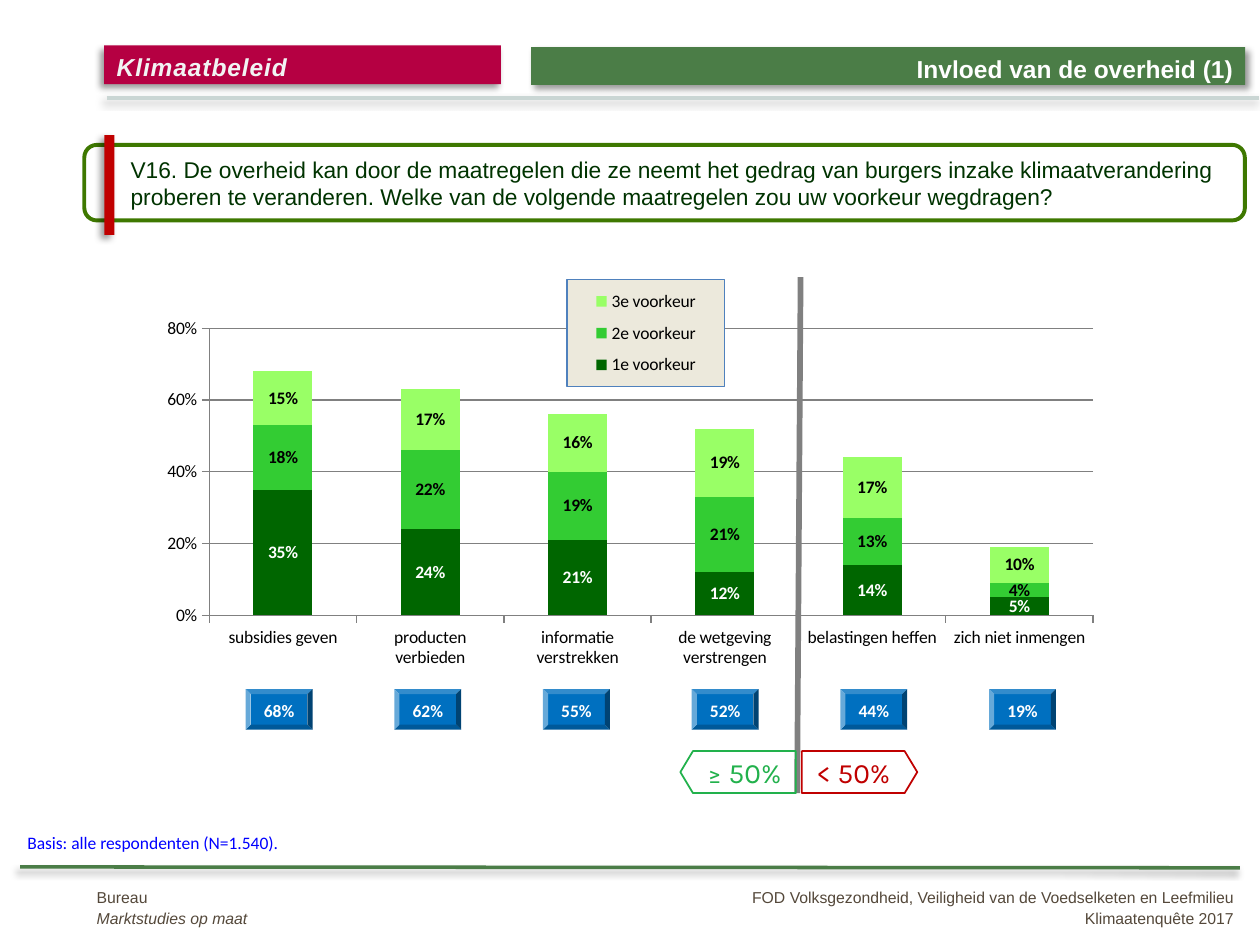
from lxml import etree
from pptx import Presentation
from pptx.chart.data import CategoryChartData
from pptx.dml.color import RGBColor
from pptx.enum import chart as ch, shapes, text
from pptx.oxml import parse_xml
from pptx.oxml.ns import nsdecls, qn
from pptx.util import Pt

GREEN = RGBColor(0x4B, 0x7D, 0x47)
FRAME_GREEN = RGBColor(0x3E, 0x78, 0x00)
DARK_GREEN = RGBColor(0x00, 0x33, 0x00)
ARROW_GREEN = RGBColor(0x22, 0xB1, 0x4C)
CRIMSON = RGBColor(0xB5, 0x00, 0x42)
RED = RGBColor(0xC0, 0x00, 0x00)
BLUE = RGBColor(0x00, 0x70, 0xC0)
NOTE_BLUE = RGBColor(0x00, 0x00, 0xFF)
LEGEND_BLUE = RGBColor(0x4F, 0x81, 0xBD)
BEIGE = RGBColor(0xEC, 0xE9, 0xDC)
BROWN = RGBColor(0x54, 0x48, 0x3A)
PALE = RGBColor(0xCA, 0xD6, 0xD4)
OFF_WHITE = RGBColor(0xF2, 0xF4, 0xF3)
WHITE = RGBColor(0xFF, 0xFF, 0xFF)
BLACK = RGBColor(0, 0, 0)
GRAY = RGBColor(0x80, 0x80, 0x80)
SERIES = [
    ("1e voorkeur", [0.35, 0.24, 0.21, 0.12, 0.14, 0.05], RGBColor(0x00, 0x66, 0x00), WHITE),
    ("2e voorkeur", [0.18, 0.22, 0.19, 0.21, 0.13, 0.04], RGBColor(0x33, 0xCC, 0x33), BLACK),
    ("3e voorkeur", [0.15, 0.17, 0.16, 0.19, 0.17, 0.1], RGBColor(0x99, 0xFF, 0x66), BLACK),
]
CATEGORIES = ["subsidies geven", "producten verbieden", "informatie verstrekken",
              "de wetgeving verstrengen", "belastingen heffen", "zich niet inmengen"]
TOTALS = ["68%", "62%", "55%", "52%", "44%", "19%"]
ALIGN = text.PP_ALIGN
ANCHOR = text.MSO_ANCHOR
SHAPE = shapes.MSO_SHAPE


def write(sp, lines, size, color, font="Arial", bold=False, italics=(), align=ALIGN.LEFT,
          anchor=ANCHOR.TOP, insets=(7.2, 3.6, 7.2, 3.6), spacing=None, indent=0, tracking=0,
          wrap=True):
    tf = sp.text_frame
    tf.word_wrap = wrap
    tf.auto_size = text.MSO_AUTO_SIZE.NONE
    tf.vertical_anchor = anchor
    tf.margin_left, tf.margin_top, tf.margin_right, tf.margin_bottom = map(Pt, insets)
    for i, line in enumerate(lines):
        p = tf.add_paragraph() if i else tf.paragraphs[0]
        pPr = p._p.get_or_add_pPr()
        pPr.set("marL", str(Pt(indent)))
        pPr.set("indent", "0")
        etree.SubElement(pPr, qn("a:buNone"))
        p.alignment = align
        p.space_before = Pt(0)
        if spacing:
            p.line_spacing = spacing
        r = p.add_run()
        r.text = line
        f = r.font
        f.name, f.size, f.bold, f.italic = font, Pt(size), bold, i in italics
        f.color.rgb = color
        if tracking:
            r._r.get_or_add_rPr().set("spc", str(int(tracking * 100)))


def shadow_list(angle):
    shade = "" if angle is None else (
        f'<a:outerShdw blurRad="{Pt(4)}" dist="{Pt(3)}" dir="{angle * 60000}" algn="tl" '
        'rotWithShape="0"><a:srgbClr val="000000"><a:alpha val="40000"/></a:srgbClr></a:outerShdw>')
    return parse_xml(f'<a:effectLst {nsdecls("a")}>{shade}</a:effectLst>')


def style(sp, fill=None, line=None, width=1, angle=None):
    if fill is None:
        sp.fill.background()
    else:
        sp.fill.solid()
        sp.fill.fore_color.rgb = fill
    if line is None:
        sp.line.fill.background()
    else:
        sp.line.color.rgb = line
        sp.line.width = Pt(width)
    sp.shadow.inherit = False
    if angle is not None:
        effects = sp._element.spPr.find(qn("a:effectLst"))
        effects.getparent().replace(effects, shadow_list(angle))


def add_box(parent, kind, box, **look):
    sp = parent.shapes.add_shape(kind, *map(Pt, box))
    style(sp, **look)
    return sp


def add_rule(parent, x1, y1, x2, y2, color, width, angle=None):
    c = parent.shapes.add_connector(shapes.MSO_CONNECTOR.STRAIGHT, *map(Pt, (x1, y1, x2, y2)))
    c.line.color.rgb = color
    c.line.width = Pt(width)
    c._element.spPr.append(shadow_list(angle))


def place(sp, x, y, w, h):
    sp.left, sp.top, sp.width, sp.height = map(Pt, (x, y, w, h))


def add_header(s, x, y, w, h):
    title, topic = s.shapes.title, s.placeholders[1]
    band = add_box(s, SHAPE.RECTANGLE, (x + w - 408, y + 1, 408, h), fill=GREEN, angle=45)
    title._element.addprevious(band._element)
    place(title, x + w - 283.5, y + 1, 284, h)
    write(title, ["Invloed van de overheid (1)"], 14, WHITE, bold=True, align=ALIGN.RIGHT)
    place(topic, x, y, 226.8, h + 0.5)
    style(topic, fill=CRIMSON, angle=135)
    write(topic, ["Klimaatbeleid"], 14, OFF_WHITE, bold=True, italics=(0,), tracking=0.5)
    add_rule(s, x + 1.5, y + 30, x + w + 8, y + 30, PALE, 2, 135)


def add_question(s, x, y, w, h):
    sp = add_box(s, SHAPE.ROUNDED_RECTANGLE, (x, y, w, h), fill=WHITE, line=FRAME_GREEN, width=2.25)
    write(sp, ["V16. De overheid kan door de maatregelen die ze neemt het gedrag van burgers inzake "
               "klimaatverandering proberen te veranderen. Welke van de volgende maatregelen zou "
               "uw voorkeur wegdragen?"], 13, DARK_GREEN, anchor=ANCHOR.MIDDLE, indent=17.3)
    add_box(s, SHAPE.RECTANGLE, (x + 11.4, y - 5.6, 5.8, 57), fill=RED, angle=135)


def set_layout(element, x, y, w, h, inner=False):
    target = '<c:layoutTarget val="inner"/>' if inner else ""
    sizes = "".join(f'<c:{k} val="{v}"/>' for k, v in zip("xywh", (x, y, w, h)))
    old = element.find(qn("c:layout"))
    if old is not None:
        element.remove(old)
    layout = parse_xml(f'<c:layout {nsdecls("c")}><c:manualLayout>{target}<c:xMode val="edge"/>'
                       f'<c:yMode val="edge"/>{sizes}</c:manualLayout></c:layout>')
    if inner:
        element.insert(0, layout)
    else:
        element.find(qn("c:legendPos")).addnext(layout)


def add_preference_chart(s, x, y, w, h):
    data = CategoryChartData(number_format="0%")
    data.categories = CATEGORIES
    for name, values, *_ in SERIES:
        data.add_series(name, values)
    chart = s.shapes.add_chart(ch.XL_CHART_TYPE.COLUMN_STACKED, *map(Pt, (x, y, w, h)), data).chart
    chart.has_title = False
    chart.font.size, chart.font.name = Pt(10), "Calibri"
    chart.font.color.rgb = BLACK
    plot = chart.plots[0]
    plot.gap_width, plot.overlap, plot.vary_by_categories = 150, 100, False
    for series, (_, _, fill, ink) in zip(plot.series, SERIES):
        series.format.fill.solid()
        series.format.fill.fore_color.rgb = fill
        labels = series.data_labels
        labels.show_value = True
        labels.number_format, labels.number_format_is_linked = "0%", False
        labels.font.size, labels.font.bold, labels.font.name = Pt(10), True, "Calibri"
        labels.font.color.rgb = ink
    axis = chart.value_axis
    axis.minimum_scale, axis.maximum_scale, axis.major_unit = 0, 0.8, 0.2
    axis.tick_labels.number_format, axis.tick_labels.number_format_is_linked = "0%", False
    for line in (axis.major_gridlines.format.line, axis.format.line,
                 chart.category_axis.format.line):
        line.color.rgb = GRAY
        line.width = Pt(0.75)
    chart.has_legend = True
    chart.legend.position = ch.XL_LEGEND_POSITION.RIGHT
    chart.legend.include_in_layout = True
    chart.legend._element.append(parse_xml(
        f'<c:spPr {nsdecls("c", "a")}><a:solidFill><a:srgbClr val="{BEIGE}"/></a:solidFill>'
        f'<a:ln w="{Pt(0.75)}"><a:solidFill><a:srgbClr val="{LEGEND_BLUE}"/></a:solidFill></a:ln></c:spPr>'))
    set_layout(chart.legend._element, 0.43, 0.01, 0.15, 0.22)
    set_layout(plot._element.getparent(), 0.09, 0.11, 0.84, 0.59, inner=True)


def add_totals(s, x, y, w, h):
    badge = 38.2
    pitch = (w - badge) / (len(TOTALS) - 1)
    for i, total in enumerate(TOTALS):
        sp = add_box(s, SHAPE.BEVEL, (x + i * pitch, y, badge, h), fill=BLUE)
        sp.adjustments[0] = 0.125
        write(sp, [total], 10, WHITE, font="Calibri", bold=True, align=ALIGN.CENTER,
              anchor=ANCHOR.MIDDLE, insets=(0, 1, 0, 0))


def add_threshold(s, x, y, w, h):
    group = s.shapes.add_group_shape()
    middle = x + w / 2
    add_rule(group, middle - 1, y + h, middle + 1, y, GRAY, 3.25)
    for kind, left, label, color in (
            (SHAPE.LEFT_ARROW, x, "≥ 50%", ARROW_GREEN),
            (SHAPE.RIGHT_ARROW, x + w - 66, "< 50%", RED)):
        sp = add_box(group, kind, (left, y + h - 24, 66, 24), line=color)
        sp.adjustments[0], sp.adjustments[1] = 1, 0.3
        write(sp, [label], 16, color, font="Karla", align=ALIGN.CENTER, anchor=ANCHOR.MIDDLE,
              insets=(0, 0, 0, 0), wrap=False)


def add_footer(s, x, y, w, h):
    note = s.shapes.add_textbox(*map(Pt, (x - 3, y - 23.6, 284, 19.5)))
    write(note, ["Basis: alle respondenten (N=1.540)."], 10, NOTE_BLUE, font="Calibri")
    add_rule(s, x, y, x + w, y + 0.5, GREEN, 2, 135)
    for left, width, lines, italics, align in (
            (x + 36.7, 170, ["Bureau", "Marktstudies op maat"], (1,), ALIGN.LEFT),
            (x + w + 3.6 - 307, 307,
             ["FOD Volksgezondheid, Veiligheid van de Voedselketen en Leefmilieu",
              "Klimaatenquête 2017"], (), ALIGN.RIGHT)):
        sp = s.shapes.add_textbox(*map(Pt, (left, y + 7.2, width, h - 7.2)))
        write(sp, lines, 9, BROWN, italics=italics, align=align, spacing=1.1)


def main():
    prs = Presentation()
    prs.slide_width, prs.slide_height = Pt(720), Pt(540)
    s = prs.slides.add_slide(prs.slide_layouts[1])
    add_header(s, 59.5, 26, 652, 21.6)
    add_question(s, 48.2, 82.8, 663.2, 43.2)
    add_preference_chart(s, 65.5, 157, 601.2, 278)
    add_totals(s, 140.4, 393.8, 463, 23.2)
    add_threshold(s, 388.8, 158.4, 135.4, 294.8)
    add_footer(s, 11.5, 495.4, 697, 38.2)
    prs.save("out.pptx")


if __name__ == "__main__":
    main()
